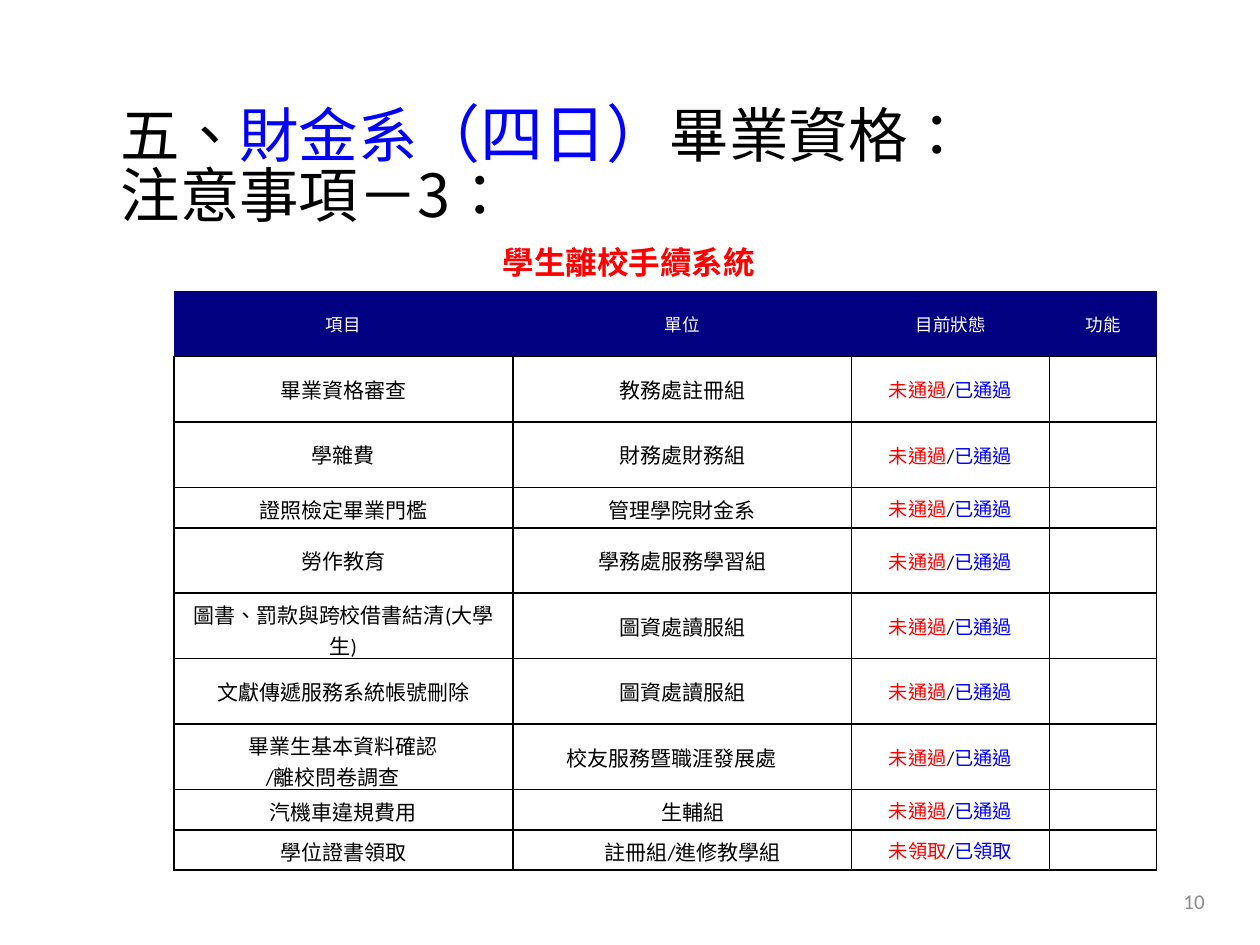
import dataclasses

import lxml.etree
import pptx
import pptx.dml.color
import pptx.enum.lang
import pptx.enum.text
import pptx.oxml.ns
import pptx.util

Inches = pptx.util.Inches
Align = pptx.enum.text.PP_ALIGN
Anchor = pptx.enum.text.MSO_ANCHOR
qn = pptx.oxml.ns.qn


@dataclasses.dataclass(frozen=True)
class Theme:
    black: str = "000000"
    white: str = "FFFFFF"
    blue: str = "0000FF"
    red: str = "FF0000"
    navy: str = "000080"
    gray: str = "8C8C8C"
    latin_font: str = "Calibri"
    title_font: str = "Noto Sans CJK JP"
    caption_font: str = "Noto Sans CJK TC"
    title_size: int = 34
    bracket_size: int = 36
    caption_size: int = 18
    body_size: int = 12
    status_size: int = 11
    header_size: int = 10
    border_width: int = 1


THEME = Theme()

COLUMN_WIDTHS = [2.69, 2.69, 1.57, 0.85]
TALL_ROW, SHORT_ROW = 0.52, 0.32
HEADINGS = ["項目", "單位", "目前狀態", "功能"]
# Item, office, verb of the status, row height
CHECKS = [
    ("畢業資格審查", "教務處註冊組", "通過", TALL_ROW),
    ("學雜費", "財務處財務組", "通過", TALL_ROW),
    ("證照檢定畢業門檻", "管理學院財金系", "通過", SHORT_ROW),
    ("勞作教育", "學務處服務學習組", "通過", TALL_ROW),
    ("圖書、罰款與跨校借書結清(大學生)", "圖資處讀服組", "通過", TALL_ROW),
    ("文獻傳遞服務系統帳號刪除", "圖資處讀服組", "通過", TALL_ROW),
    ("畢業生基本資料確認\n/離校問卷調查　", "校友服務暨職涯發展處　", "通過", TALL_ROW),
    ("汽機車違規費用", "　生輔組", "通過", SHORT_ROW),
    ("學位證書領取", "　註冊組/進修教學組", "領取", SHORT_ROW),
]


def add_text(paragraph, text, *, size, color=THEME.black, font=THEME.latin_font,
             east_asian=THEME.title_font, bold=False):
    """Append formatted text; each newline becomes a line break."""
    for index, line in enumerate(text.split("\n")):
        if index:
            paragraph.add_line_break()
        run = paragraph.add_run()
        run.text = line
        run.font.size = pptx.util.Pt(size)
        run.font.bold = bold
        run.font.name = font
        run.font.color.rgb = pptx.dml.color.RGBColor.from_string(color)
        run.font.language_id = pptx.enum.lang.MSO_LANGUAGE_ID.TRADITIONAL_CHINESE
        properties = run.font._element
        lxml.etree.SubElement(properties, qn("a:ea"), typeface=east_asian)


def add_text_box(slide, left, top, width, height, *, anchor=Anchor.TOP,
                 align=Align.LEFT, wrap=True):
    """Add a text box and return its first paragraph."""
    frame = slide.shapes.add_textbox(
        Inches(left), Inches(top), Inches(width), Inches(height)).text_frame
    frame.word_wrap = wrap
    frame.vertical_anchor = anchor
    paragraph = frame.paragraphs[0]
    paragraph.alignment = align
    return paragraph


def set_borders(cell, visible_sides):
    """Draw the named sides (L, R, T, B) and hide the others."""
    properties = cell._tc.get_or_add_tcPr()
    for index, side in enumerate("LRTB"):
        line = lxml.etree.Element(
            qn("a:ln" + side), w=str(pptx.util.Pt(THEME.border_width)))
        if side in visible_sides:
            fill = lxml.etree.SubElement(line, qn("a:solidFill"))
            lxml.etree.SubElement(fill, qn("a:srgbClr"), val=THEME.black)
        else:
            lxml.etree.SubElement(line, qn("a:noFill"))
        properties.insert(index, line)


def style_cell(cell, fill, visible_sides):
    """Format a cell and return its centred paragraph."""
    cell.fill.solid()
    cell.fill.fore_color.rgb = pptx.dml.color.RGBColor.from_string(fill)
    set_borders(cell, visible_sides)
    cell.vertical_anchor = Anchor.MIDDLE
    paragraph = cell.text_frame.paragraphs[0]
    paragraph.alignment = Align.CENTER
    return paragraph


def add_title(slide):
    paragraph = add_text_box(slide, 0.86, 0.71, 8.83, 1.25, anchor=Anchor.MIDDLE)
    paragraph.line_spacing = 0.84
    for text, size, color in [
        ("五、", THEME.title_size, THEME.black),
        ("財金系", THEME.title_size, THEME.blue),
        ("（四日）", THEME.bracket_size, THEME.blue),
        ("畢業資格：\n注意事項－3：", THEME.title_size, THEME.black),
    ]:
        add_text(paragraph, text, size=size, color=color, font=THEME.title_font)


def add_check_table(slide):
    heights = [TALL_ROW] + [check[-1] for check in CHECKS]
    table = slide.shapes.add_table(
        len(heights), len(COLUMN_WIDTHS), Inches(1.38), Inches(2.31),
        Inches(sum(COLUMN_WIDTHS)), Inches(sum(heights))).table
    table.first_row = table.horz_banding = False
    for column, width in zip(table.columns, COLUMN_WIDTHS):
        column.width = Inches(width)
    for row, height in zip(table.rows, heights):
        row.height = Inches(height)

    # Header row
    for cell, heading in zip(table.rows[0].cells, HEADINGS):
        add_text(style_cell(cell, THEME.navy, "B"), heading,
                 size=THEME.header_size, color=THEME.white)

    # One row for each check; the last column stays empty
    for row_index, (item, office, verb, _) in enumerate(CHECKS, start=1):
        item_text, office_text, status, function = [
            style_cell(cell, THEME.white, "LRTB")
            for cell in table.rows[row_index].cells]
        add_text(item_text, item, size=THEME.body_size)
        add_text(office_text, office, size=THEME.body_size)
        for text, color in [("未" + verb, THEME.red), ("/", THEME.black),
                            ("已" + verb, THEME.blue)]:
            add_text(status, text, size=THEME.status_size, color=color)
        function.font.size = pptx.util.Pt(THEME.status_size)


def main():
    presentation = pptx.Presentation()
    presentation.slide_width = Inches(10)
    presentation.slide_height = Inches(7.5)
    slide = presentation.slides.add_slide(presentation.slide_layouts[6])

    add_title(slide)

    # Page number
    number = add_text_box(slide, 7.33, 6.95, 2.33, 0.4,
                          anchor=Anchor.MIDDLE, align=Align.RIGHT)
    add_text(number, "10", size=THEME.body_size, color=THEME.gray)

    add_check_table(slide)

    # Table caption
    caption = add_text_box(slide, 3.89, 1.88, 2.22, 0.4, wrap=False)
    add_text(caption, "學生離校手續系統", size=THEME.caption_size, color=THEME.red,
             font=THEME.caption_font, east_asian=THEME.caption_font, bold=True)

    presentation.save("out.pptx")


if __name__ == "__main__":
    main()
